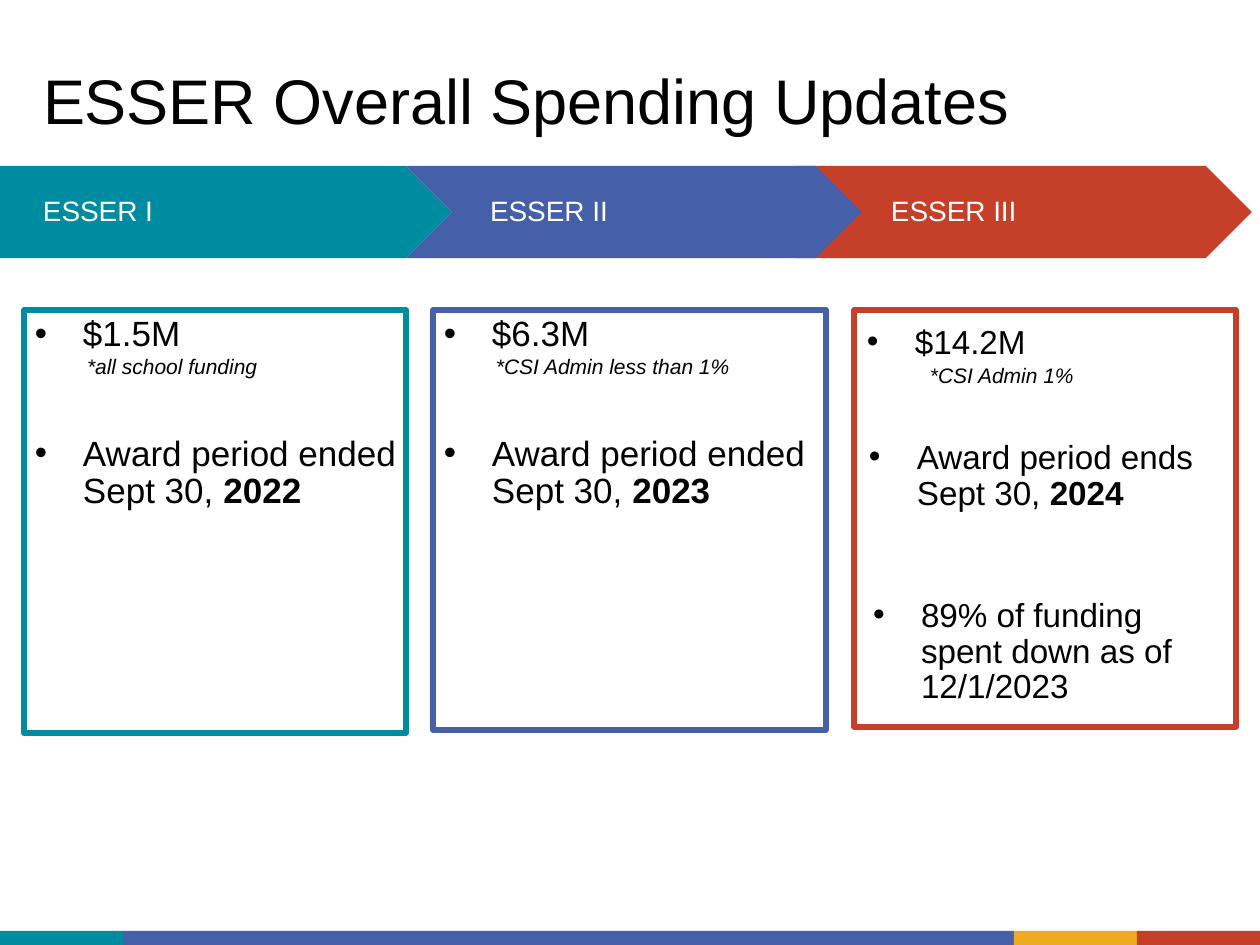
from lxml import etree
from pptx import Presentation
from pptx.dml.color import RGBColor
from pptx.enum.shapes import MSO_SHAPE
from pptx.enum.text import MSO_ANCHOR, PP_ALIGN
from pptx.oxml.ns import qn
from pptx.util import Pt

RECT, PENTAGON, CHEVRON = MSO_SHAPE.RECTANGLE, MSO_SHAPE.PENTAGON, MSO_SHAPE.CHEVRON
TOP, MIDDLE, LEFT = MSO_ANCHOR.TOP, MSO_ANCHOR.MIDDLE, PP_ALIGN.LEFT
TEAL, BLUE, RED, GOLD = "008CA0", "455FA9", "C63F28", "EFAA1F"
BLACK, WHITE = "000000", "FFFFFF"
PX = 914400 / 126


def color(value):
    return RGBColor.from_string(value)


def write(tf, paragraphs, inset=1, anchor=TOP):
    """Fill a frame with (runs, format) pairs; each run is (text, bold)."""
    frame = dict(word_wrap=True, vertical_anchor=anchor, margin_left=0,
                 margin_right=0, margin_bottom=0, margin_top=round(inset * PX))
    for name, value in frame.items():
        setattr(tf, name, value)
    for i, (runs, fmt) in enumerate(paragraphs):
        p = tf.paragraphs[0] if i == 0 else tf.add_paragraph()
        p.alignment = LEFT
        p.space_before = Pt(fmt.get("before", 0))
        if "line" in fmt:
            p.line_spacing = Pt(fmt["line"])
        pPr = p._p.get_or_add_pPr()
        pPr.set("marL", str(round(fmt.get("left", 0) * PX)))
        pPr.set("indent", str(round(-fmt.get("hang", 0) * PX)))
        if fmt.get("hang"):
            etree.SubElement(pPr, qn("a:buFont")).set("typeface", "Arial")
            etree.SubElement(pPr, qn("a:buChar")).set("char", "•")
        else:
            etree.SubElement(pPr, qn("a:buNone"))
        for text, bold in runs:
            r = p.add_run()
            r.text = text
            font = dict(name="Arial", size=Pt(fmt["size"]), bold=bold,
                        italic=fmt.get("italic", False))
            for name, value in font.items():
                setattr(r.font, name, value)
            r.font.color.rgb = color(fmt.get("color", BLACK))


prs = Presentation()
prs.slide_width, prs.slide_height = round(1260 * PX), round(945 * PX)
s = prs.slides.add_slide(prs.slide_layouts[5])

# Arrow banner and footer stripe
blocks = [
    (CHEVRON, 796, 166, 456, 92, RED),
    (PENTAGON, 0, 166, 452, 92, TEAL),
    (CHEVRON, 406, 166, 456, 92, BLUE),
    (RECT, 0, 931, 123, 14, TEAL),
    (RECT, 123, 931, 891, 14, BLUE),
    (RECT, 1014, 931, 123, 14, GOLD),
    (RECT, 1137, 931, 123, 14, RED),
]
for kind, *box, fill in blocks:
    sp = s.shapes.add_shape(kind, *[round(v * PX) for v in box])
    sp.shadow.inherit = False
    sp.fill.solid()
    sp.fill.fore_color.rgb = color(fill)
    sp.line.fill.background()

# Title
title = s.shapes.title
title.left, title.top, title.width, title.height = [
    round(v * PX) for v in (42, 59, 970, 79)]
write(title.text_frame, [([("ESSER Overall Spending Updates", False)],
                          dict(size=36, left=1))], anchor=MIDDLE)

# Outlined cards; the third one is filled by separate text boxes
cards = [
    ((24, 310, 382, 423), TEAL, "$1.5M", "*all school funding", "2022"),
    ((433, 310, 393, 420), BLUE, "$6.3M", "*CSI Admin less than 1%", "2023"),
    ((854, 310, 382, 417), RED, None, None, None),
]
for box, line, amount, note, year in cards:
    sp = s.shapes.add_shape(RECT, *[round(v * PX) for v in box])
    sp.shadow.inherit = False
    sp.fill.background()
    sp.line.color.rgb = color(line)
    sp.line.width = Pt(3)
    if amount:
        bullet = dict(size=20, left=59, hang=48)
        write(sp.text_frame, [
            ([(amount, False)], bullet),
            ([(note, False)], dict(size=12, left=63, italic=True)),
            ([("Award period ended Sept 30, ", False), (year, True)],
             dict(bullet, line=21.6, before=32)),
        ], inset=2)

# Banner labels and text of the third card
label = dict(size=16, color=WHITE, left=1)
bullet = dict(size=19, left=48, hang=48)
spaced = dict(bullet, line=20.5)
texts = [
    ((42, 192, 113, 35), 2, [([("ESSER I", False)], label)]),
    ((489, 192, 122, 35), 2, [([("ESSER II", False)], label)]),
    ((890, 192, 130, 35), 2, [([("ESSER III", False)], label)]),
    ((867, 318, 355, 111), 3, [
        ([("$14.2M", False)], bullet),
        ([("*CSI Admin 1%", False)],
         dict(size=12, left=63, italic=True, before=1))]),
    ((869, 433, 326, 79), 7, [
        ([("Award period ends Sept 30, ", False), ("2024", True)], spaced)]),
    ((873, 591, 344, 117), 7, [
        ([("89% of funding spent down as of 12/1/2023", False)], spaced)]),
]
for box, inset, paragraphs in texts:
    sp = s.shapes.add_textbox(*[round(v * PX) for v in box])
    write(sp.text_frame, paragraphs, inset)

prs.save("out.pptx")
